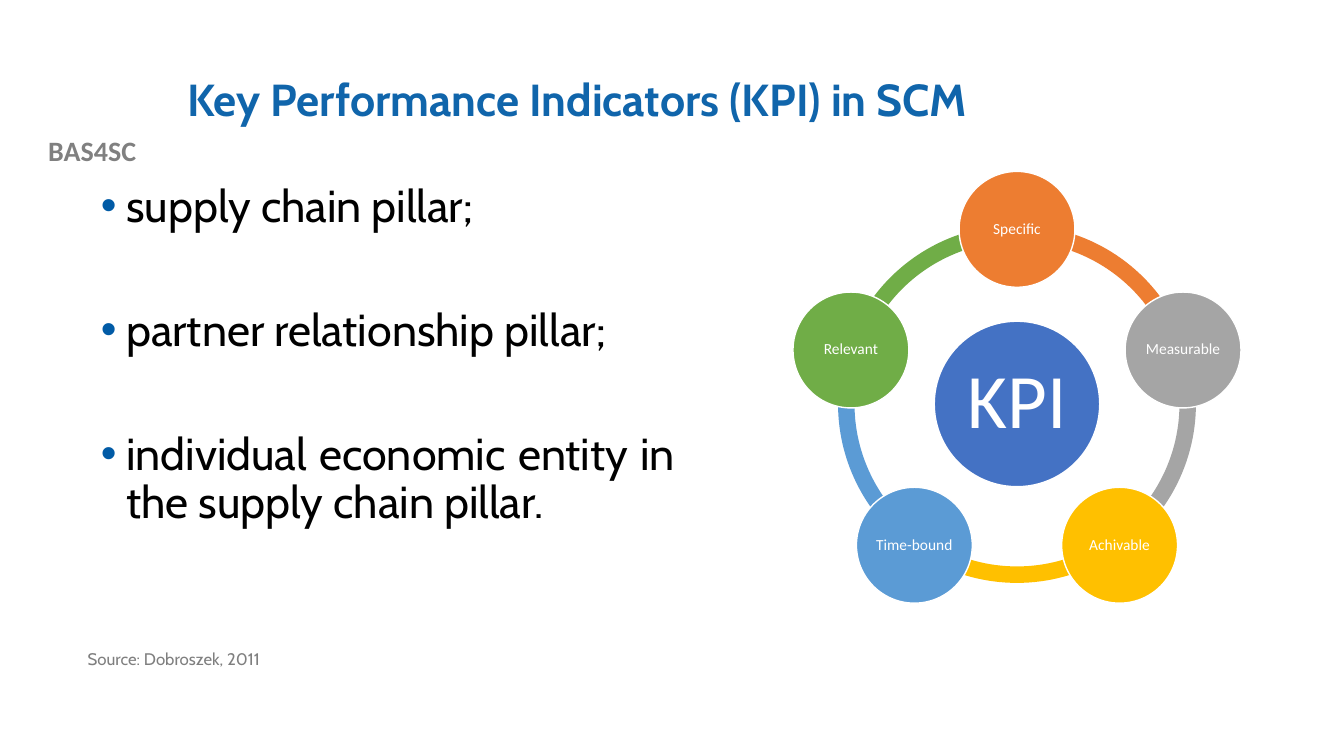
from math import cos, radians, sin

from lxml import etree
from pptx import Presentation
from pptx.dml.color import RGBColor
from pptx.enum.shapes import MSO_SHAPE
from pptx.enum.text import MSO_ANCHOR, PP_ALIGN
from pptx.oxml.ns import qn
from pptx.util import Cm, Pt

ELLIPSE = MSO_SHAPE.OVAL
BLOCK_ARC = MSO_SHAPE.BLOCK_ARC
MIDDLE = MSO_ANCHOR.MIDDLE
TOP = MSO_ANCHOR.TOP
LEFT = PP_ALIGN.LEFT
CENTER = PP_ALIGN.CENTER
JUSTIFY = PP_ALIGN.JUSTIFY

COLORS = {
    "title": "1065AB", "bullet": "015BA6", "body": "000000",
    "project": "808080", "source": "7F7F7F", "white": "FFFFFF",
    "hub": "4472C4", "orange": "ED7D31", "grey": "A5A5A5",
    "yellow": "FFC000", "blue": "5B9BD5", "green": "70AD47",
}
PILLARS = [
    "supply chain pillar;",
    "partner relationship pillar;",
    "individual economic entity in the supply chain pillar.",
]
CRITERIA = [
    ("Specific", "orange"), ("Measurable", "grey"), ("Achivable", "yellow"),
    ("Time-bound", "blue"), ("Relevant", "green"),
]
CENTER_X, CENTER_Y = 25.63, 10.18
RING_RADIUS = 4.4
ARC_SIZE, HUB_SIZE, NODE_SIZE = 9.02, 4.17, 2.92
ARC_THICKNESS = 0.046
TOP_ANGLE = 270


def rgb(name):
    """Return the named colour."""
    return RGBColor.from_string(COLORS[name])


def apply_format(target, values):
    """Set each attribute in values on the target."""
    for attribute, value in values.items():
        setattr(target, attribute, value)


def add_bullet(paragraph):
    """Give the paragraph a coloured bullet with a hanging indent."""
    properties = paragraph._p.get_or_add_pPr()
    properties.set("marL", str(Cm(0.64)))
    properties.set("indent", str(-Cm(0.64)))
    bullet_color = etree.SubElement(properties, qn("a:buClr"))
    etree.SubElement(bullet_color, qn("a:srgbClr"), val=COLORS["bullet"])
    etree.SubElement(properties, qn("a:buFont"), typeface="Arial")
    etree.SubElement(properties, qn("a:buChar"), char="•")


def write_paragraph(paragraph, text, color, font, layout):
    """Write text with the given font and paragraph formats."""
    paragraph.text = text
    apply_format(paragraph, layout)
    apply_format(paragraph.font, font)
    paragraph.font.color.rgb = rgb(color)


def add_text(slide, box, lines, color, font, layout, anchor=TOP, bulleted=False, gap=0):
    """Add a wrapped text box with one paragraph per line."""
    frame = slide.shapes.add_textbox(*map(Cm, box)).text_frame
    apply_format(frame, {"word_wrap": True, "vertical_anchor": anchor})
    for index, line in enumerate(lines):
        paragraph = frame.add_paragraph() if index else frame.paragraphs[0]
        if bulleted:
            add_bullet(paragraph)
        write_paragraph(paragraph, line, color, font, layout)
        if index:
            paragraph.space_before = Pt(gap)


def add_centered_shape(slide, kind, x, y, size, color):
    """Add a filled square-bounded shape around a centre point."""
    shape = slide.shapes.add_shape(
        kind, Cm(x - size / 2), Cm(y - size / 2), Cm(size), Cm(size))
    shape.shadow.inherit = False
    shape.fill.solid()
    shape.fill.fore_color.rgb = rgb(color)
    return shape


def add_arc(slide, start, sweep, color):
    """Add one ring segment that runs clockwise from start, in degrees."""
    arc = add_centered_shape(slide, BLOCK_ARC, CENTER_X, CENTER_Y, ARC_SIZE, color)
    arc.line.fill.background()
    arc.adjustments[0] = start % 360 * 0.6
    arc.adjustments[1] = (start + sweep) % 360 * 0.6
    arc.adjustments[2] = ARC_THICKNESS


def add_circle(slide, x, y, size, color, label, points):
    """Add a white-edged circle with a centred label."""
    circle = add_centered_shape(slide, ELLIPSE, x, y, size, color)
    circle.line.color.rgb = rgb("white")
    circle.line.width = Pt(1)
    frame = circle.text_frame
    apply_format(frame, {
        "word_wrap": False, "vertical_anchor": MIDDLE,
        "margin_left": Cm(0.05), "margin_right": Cm(0.05),
        "margin_top": Cm(0.05), "margin_bottom": Cm(0.05),
    })
    write_paragraph(frame.paragraphs[0], label, "white",
                    {"name": "Calibri", "size": Pt(points)},
                    {"alignment": CENTER, "line_spacing": 0.9})


def add_kpi_cycle(slide):
    """Draw the ring of criteria around the KPI hub."""
    sweep = 360 / len(CRITERIA)
    angles = [TOP_ANGLE + sweep * index for index in range(len(CRITERIA))]
    for angle, (_, color) in zip(angles, CRITERIA):
        add_arc(slide, angle, sweep, color)
    add_circle(slide, CENTER_X, CENTER_Y, HUB_SIZE, "hub", "KPI", 55)
    for angle, (label, color) in zip(angles, CRITERIA):
        x = CENTER_X + RING_RADIUS * cos(radians(angle))
        y = CENTER_Y + RING_RADIUS * sin(radians(angle))
        add_circle(slide, x, y, NODE_SIZE, color, label, 11)


def main():
    """Build and save the slide."""
    presentation = Presentation()
    presentation.slide_width = Cm(33.87)
    presentation.slide_height = Cm(19.05)
    slide = presentation.slides.add_slide(presentation.slide_layouts[6])
    add_text(slide, (0, 3.25, 4.65, 1.12), ["BAS4SC"], "project",
             {"name": "Calibri", "size": Pt(20), "bold": True}, {"alignment": CENTER})
    add_text(slide, (4.47, 1.02, 27.08, 3.1),
             ["Key Performance Indicators (KPI) in SCM"], "title",
             {"name": "Cabin", "size": Pt(32), "bold": True},
             {"alignment": LEFT, "line_spacing": 0.9}, anchor=MIDDLE)
    add_text(slide, (2.29, 4.5, 14.99, 12.09), PILLARS, "body",
             {"name": "Cabin", "size": Pt(32)},
             {"alignment": JUSTIFY, "line_spacing": 0.9}, bulleted=True, gap=54)
    add_text(slide, (1.96, 16.28, 12.73, 1.32), ["Source: Dobroszek, 2011"], "source",
             {"name": "Cabin", "size": Pt(12)},
             {"alignment": LEFT, "line_spacing": 0.9})
    add_kpi_cycle(slide)
    presentation.save("out.pptx")


if __name__ == "__main__":
    main()
